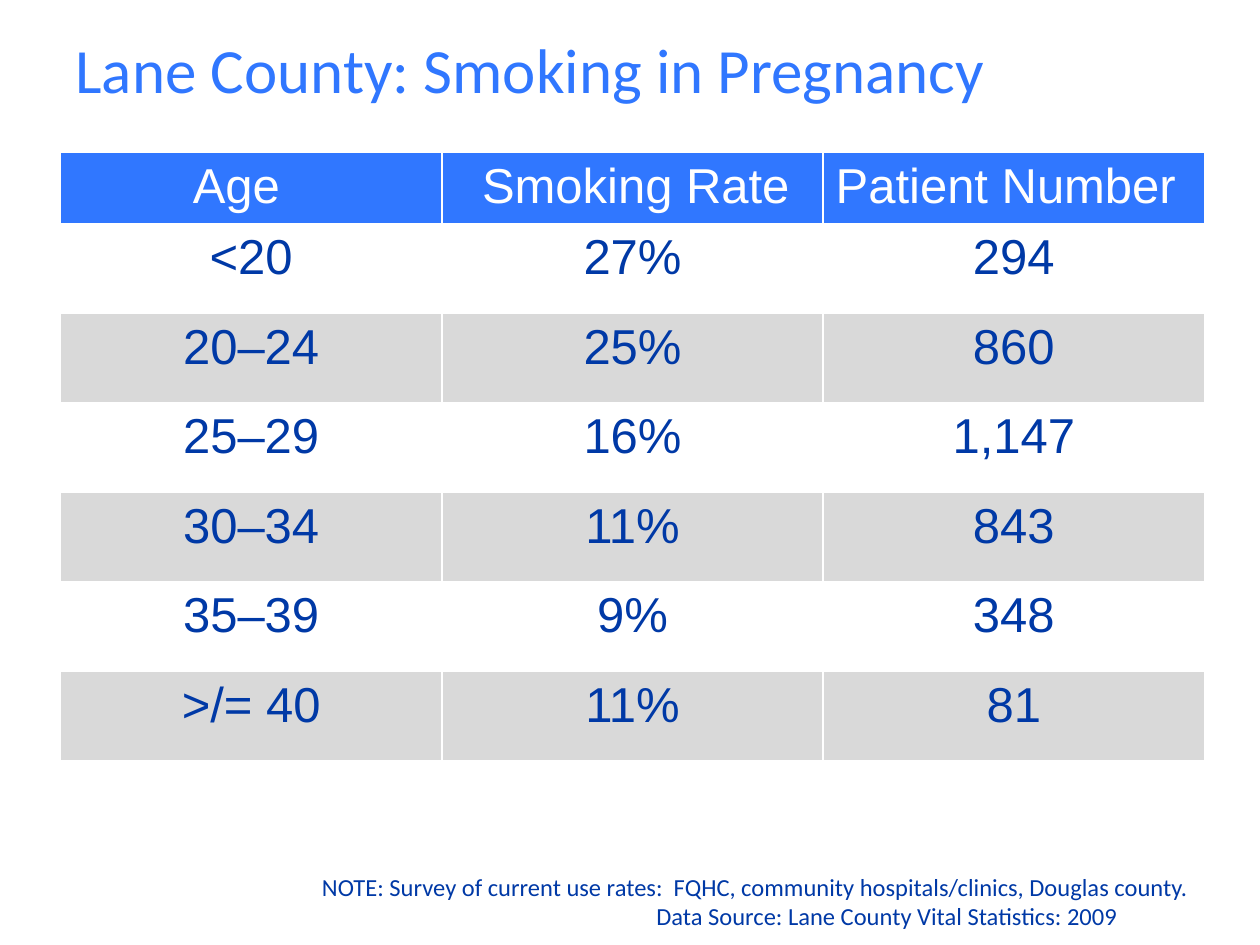
from dataclasses import dataclass
from pptx import Presentation
from pptx.dml.color import RGBColor
from pptx.enum.text import MSO_ANCHOR, PP_ALIGN
from pptx.util import Inches, Pt

LEFT, CENTER, RIGHT = PP_ALIGN.LEFT, PP_ALIGN.CENTER, PP_ALIGN.RIGHT
TOP, MIDDLE = MSO_ANCHOR.TOP, MSO_ANCHOR.MIDDLE


@dataclass(frozen=True)
class Theme:
    """Colours, fonts and type sizes of the slide."""
    blue: str = "3077FF"
    navy: str = "0039A6"
    white: str = "FFFFFF"
    gray: str = "D9D9D9"
    sans: str = "Calibri"
    grid: str = "Arial"
    title: int = 36
    cell: int = 28
    note: int = 14


THEME = Theme()
HEADS = [("Age", 0.95), ("Smoking Rate", 0.22), ("Patient Number", 0)]
RATES = [
    ("<20", "27%", "294"),
    ("20–24", "25%", "860"),
    ("25–29", "16%", "1,147"),
    ("30–34", "11%", "843"),
    ("35–39", "9%", "348"),
    (">/= 40", "11%", "81"),
]
NOTES = [
    ("NOTE: Survey of current use rates:  FQHC, community hospitals/clinics, Douglas county.", RIGHT, 0),
    ("Data Source: Lane County Vital Statistics: 2009", LEFT, 4.69),
]


def add_run(para, text, face, size, color, align=LEFT):
    """Add one styled run to an aligned paragraph."""
    para.alignment = align
    run = para.add_run()
    run.text = text
    run.font.name = face
    run.font.size = Pt(size)
    run.font.color.rgb = RGBColor.from_string(color)


def add_box(slide, left, top, width, height, anchor):
    """Add a wrapping text box and return its frame."""
    frame = slide.shapes.add_textbox(Inches(left), Inches(top), Inches(width), Inches(height)).text_frame
    frame.word_wrap = True
    frame.vertical_anchor = anchor
    return frame


def fill_cell(cell, text, fill, color, align, indent=0):
    """Write and colour one table cell."""
    cell.fill.solid()
    cell.fill.fore_color.rgb = RGBColor.from_string(fill)
    cell.margin_left = Inches(0.1 + indent)
    add_run(cell.text_frame.paragraphs[0], text, THEME.grid, THEME.cell, color, align)


def add_rates(slide):
    """Add the table of smoking rates by age."""
    shape = slide.shapes.add_table(len(RATES) + 1, len(HEADS), Inches(0.48), Inches(1.21), Inches(9.08), Inches(4.81))
    table = shape.table
    for row in table.rows:
        row.height = Inches(0.71)
    table.rows[0].height = Inches(0.57)
    for col, (head, indent) in enumerate(HEADS):
        fill_cell(table.cell(0, col), head, THEME.blue, THEME.white, LEFT, indent)
    for row, rate in enumerate(RATES, 1):
        fill = THEME.white if row % 2 else THEME.gray
        for col, text in enumerate(rate):
            fill_cell(table.cell(row, col), text, fill, THEME.navy, CENTER)


def add_notes(slide):
    """Add the survey note and the data source."""
    frame = add_box(slide, 0.42, 6.87, 9.11, 0.57, TOP)
    for row, (text, align, indent) in enumerate(NOTES):
        para = frame.add_paragraph() if row else frame.paragraphs[0]
        if indent:
            props = para._p.get_or_add_pPr()
            props.set("marL", str(Inches(indent)))
            props.set("indent", "0")
        add_run(para, text, THEME.sans, THEME.note, THEME.navy, align)


def main():
    """Build and save the slide."""
    deck = Presentation()
    deck.slide_width, deck.slide_height = Inches(10), Inches(7.5)
    slide = deck.slides.add_slide(deck.slide_layouts[6])
    add_rates(slide)
    add_notes(slide)
    title = add_box(slide, 0.5, 0.14, 8.95, 0.8, MIDDLE)
    add_run(title.paragraphs[0], "Lane County: Smoking in Pregnancy", THEME.sans, THEME.title, THEME.blue)
    deck.save("out.pptx")


if __name__ == "__main__":
    main()
